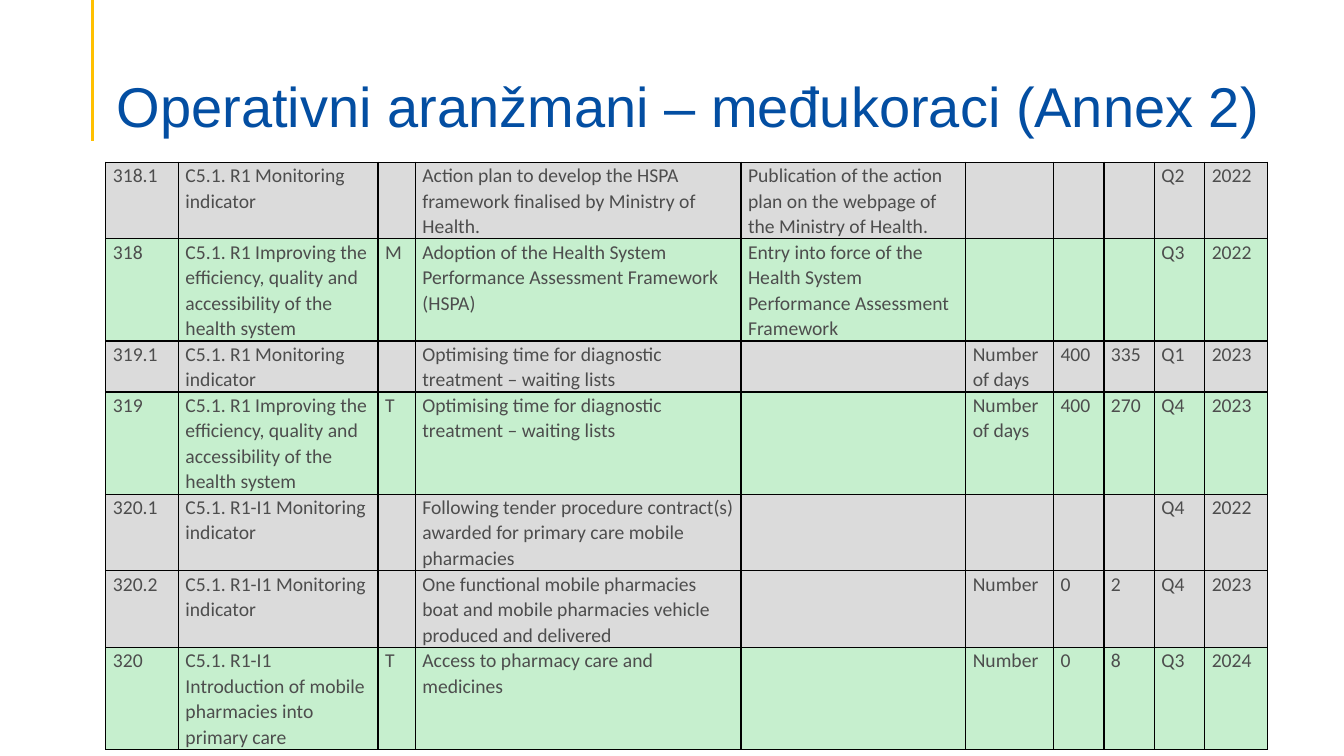
"""Build the slide listing the intermediate steps of the operational arrangements."""
from dataclasses import dataclass

from lxml import etree
from pptx import Presentation
from pptx.dml.color import RGBColor
from pptx.enum.shapes import MSO_CONNECTOR
from pptx.enum.text import MSO_ANCHOR, MSO_AUTO_SIZE, PP_ALIGN
from pptx.oxml.ns import qn
from pptx.util import Inches, Pt

STRAIGHT = MSO_CONNECTOR.STRAIGHT
BOTTOM = MSO_ANCHOR.BOTTOM
NO_FIT = MSO_AUTO_SIZE.NONE
LEFT = PP_ALIGN.LEFT

TITLE = "Operativni aranžmani – međukoraci (Annex 2)"
MONITORING = "C5.1. R1 Monitoring indicator"
MONITORING_I1 = "C5.1. R1-I1 Monitoring indicator"
IMPROVING = "C5.1. R1 Improving the efficiency, quality and accessibility of the health system"
WAITING = "Optimising time for diagnostic treatment – waiting lists"
STEPS = [
    ("318.1", MONITORING, "",
     "Action plan to develop the HSPA framework finalised by Ministry of Health.",
     "Publication of the action plan on the webpage of the Ministry of Health.",
     "", "", "", "Q2", "2022"),
    ("318", IMPROVING, "M",
     "Adoption of the Health System Performance Assessment Framework (HSPA)",
     "Entry into force of the Health System Performance Assessment Framework",
     "", "", "", "Q3", "2022"),
    ("319.1", MONITORING, "", WAITING, "", "Number of days", "400", "335", "Q1", "2023"),
    ("319", IMPROVING, "T", WAITING, "", "Number of days", "400", "270", "Q4", "2023"),
    ("320.1", MONITORING_I1, "",
     "Following tender procedure contract(s) awarded for primary care mobile pharmacies",
     "", "", "", "", "Q4", "2022"),
    ("320.2", MONITORING_I1, "",
     "One functional mobile pharmacies boat and mobile pharmacies vehicle produced and delivered",
     "", "Number", "0", "2", "Q4", "2023"),
    ("320", "C5.1. R1-I1 Introduction of mobile pharmacies into primary care", "T",
     "Access to pharmacy care and medicines", "", "Number", "0", "8", "Q3", "2024"),
]
ROW_LINES = (3, 4, 2, 4, 3, 3, 4)
COL_WIDTHS = (0.72, 1.98, 0.37, 3.23, 2.23, 0.87, 0.5, 0.5, 0.5, 0.62)
LINE_HEIGHT = 0.25
TABLE_LEFT, TABLE_TOP = 1.05, 1.61
RULE_X, RULE_BOTTOM = 0.92, 1.4


@dataclass(frozen=True)
class Theme:
    """Colours, fonts and type sizes."""
    title: str = "034EA2"
    text: str = "4D4D4D"
    rule: str = "FFC000"
    border: str = "000000"
    indicator: str = "DBDBDB"
    milestone: str = "C6EFCE"
    title_font: str = "Arial"
    body_font: str = "Calibri"
    title_size: int = 40
    body_size: int = 14


THEME = Theme()


def style(p, font, size, color):
    for r in p.runs:
        r.font.name = font
        r.font.size = Pt(size)
        r.font.color.rgb = RGBColor.from_string(color)


def add_borders(cell):
    tc_pr = cell._tc.get_or_add_tcPr()
    for side in ("a:lnL", "a:lnR", "a:lnT", "a:lnB"):
        ln = etree.SubElement(tc_pr, qn(side), w=str(Pt(1)))
        fill = etree.SubElement(ln, qn("a:solidFill"))
        etree.SubElement(fill, qn("a:srgbClr"), val=THEME.border)


def add_title(slide):
    sp = slide.shapes.title
    sp.left, sp.top, sp.width, sp.height = map(Inches, (1.06, 0.53, 11.78, 0.86))
    tf = sp.text_frame
    tf.text = TITLE
    tf.word_wrap = True
    tf.auto_size = NO_FIT
    tf.vertical_anchor = BOTTOM
    tf.margin_left = tf.margin_right = Inches(0.1)
    tf.margin_top, tf.margin_bottom = Inches(0.05), 0
    p = tf.paragraphs[0]
    p.alignment = LEFT
    p.line_spacing = 0.9
    style(p, THEME.title_font, THEME.title_size, THEME.title)


def add_rule(slide):
    x = Inches(RULE_X)
    line = slide.shapes.add_connector(STRAIGHT, x, 0, x, Inches(RULE_BOTTOM))
    line.line.color.rgb = RGBColor.from_string(THEME.rule)
    line.line.width = Pt(2.25)
    etree.SubElement(line._element.spPr, qn("a:effectLst"))


def fill_cell(cell, text, color):
    add_borders(cell)
    cell.fill.solid()
    cell.fill.fore_color.rgb = RGBColor.from_string(color)
    cell.margin_left = cell.margin_right = Inches(0.07)
    cell.margin_top = cell.margin_bottom = 0
    if text:
        cell.text = text
        p = cell.text_frame.paragraphs[0]
        p.line_spacing = 1.07
        p.space_after = Pt(8)
        style(p, THEME.body_font, THEME.body_size, THEME.text)


def add_steps(slide):
    table = slide.shapes.add_table(
        len(STEPS), len(COL_WIDTHS), Inches(TABLE_LEFT), Inches(TABLE_TOP),
        Inches(sum(COL_WIDTHS)), Inches(sum(ROW_LINES) * LINE_HEIGHT)).table
    table.first_row = table.horz_banding = False
    for col, width in zip(table.columns, COL_WIDTHS):
        col.width = Inches(width)
    for row, lines, step in zip(table.rows, ROW_LINES, STEPS):
        row.height = Inches(lines * LINE_HEIGHT)
        color = THEME.indicator if "." in step[0] else THEME.milestone
        for cell, text in zip(row.cells, step):
            fill_cell(cell, text, color)


def main():
    prs = Presentation()
    prs.slide_width, prs.slide_height = Inches(13.33), Inches(7.5)
    slide = prs.slides.add_slide(prs.slide_layouts[5])
    add_rule(slide)
    add_steps(slide)
    add_title(slide)
    prs.save("out.pptx")


if __name__ == "__main__":
    main()
